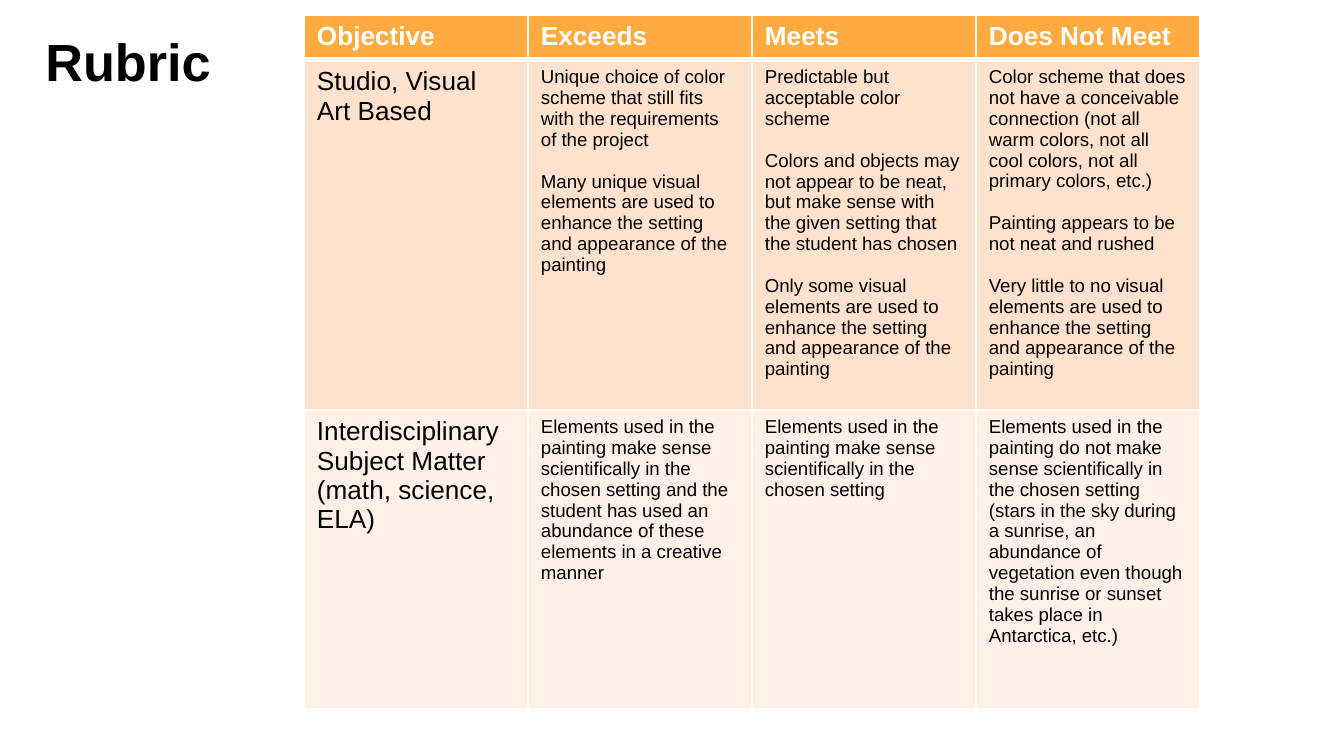
"""Build the grading rubric slide: a title beside a four-column table."""
from dataclasses import dataclass

from lxml.etree import SubElement
from pptx import Presentation
from pptx.dml.color import RGBColor as Color
from pptx.enum.text import MSO_ANCHOR as Anchor, PP_ALIGN as Align
from pptx.oxml.ns import qn
from pptx.util import Pt

EMU_PER_PX = 914400 / 134.4


@dataclass(frozen=True)
class Theme:
    font: str = "Arial"
    ink: str = "000000"
    white: str = "FFFFFF"
    header: str = "FFAB40"
    title_size: int = 28
    label_size: int = 14
    body_size: int = 10
    paragraph_gap: float = 11.2
    thin: int = 1
    thick: int = 3


@dataclass(frozen=True)
class Band:
    height: int
    fill: str
    top: int
    bottom: int
    cells: tuple[tuple[str, ...], ...]
    is_header: bool = False


THEME = Theme()
COLUMN_WIDTH = 224
BANDS = (
    Band(45, THEME.header, THEME.thin, THEME.thick,
         (("Objective",), ("Exceeds",), ("Meets",), ("Does Not Meet",)), True),
    Band(350, "FFE2CD", THEME.thick, THEME.thin, (
        ("Studio, Visual Art Based",),
        ("Unique choice of color scheme that still fits with the requirements of the project",
         "Many unique visual elements are used to enhance the setting and appearance of the painting"),
        ("Predictable but acceptable color scheme",
         "Colors and objects may not appear to be neat, but make sense with the given setting "
         "that the student has chosen",
         "Only some visual elements are used to enhance the setting and appearance of the painting"),
        ("Color scheme that does not have a conceivable connection (not all warm colors, "
         "not all cool colors, not all primary colors, etc.)",
         "Painting appears to be not neat and rushed",
         "Very little to no visual elements are used to enhance the setting and appearance "
         "of the painting"),
    )),
    Band(299, "FFF1E8", THEME.thin, THEME.thin, (
        ("Interdisciplinary Subject Matter (math, science, ELA)",),
        ("Elements used in the painting make sense scientifically in the chosen setting and the "
         "student has used an abundance of these elements in a creative manner",),
        ("Elements used in the painting make sense scientifically in the chosen setting",),
        ("Elements used in the painting do not make sense scientifically in the chosen setting "
         "(stars in the sky during a sunrise, an abundance of vegetation even though the sunrise "
         "or sunset takes place in Antarctica, etc.)",),
    )),
)


def px(length: int) -> int:
    """Turn pixels into EMU."""
    return round(length * EMU_PER_PX)


def apply(target, values: dict) -> None:
    """Set each named attribute on the target."""
    for name, value in values.items():
        setattr(target, name, value)


def write(frame, paragraphs: tuple[str, ...], size: int, color: str, bold: bool) -> None:
    """Fill a text frame with evenly spaced, left-aligned paragraphs."""
    for index, text in enumerate(paragraphs):
        para = frame.add_paragraph() if index else frame.paragraphs[0]
        gap = THEME.paragraph_gap if index else 0
        apply(para, {"alignment": Align.LEFT, "space_before": Pt(gap), "line_spacing": 1.0})
        span = para.add_run()
        span.text = text
        apply(span.font, {"name": THEME.font, "size": Pt(size), "bold": bold})
        span.font.color.rgb = Color.from_string(color)


def draw_borders(cell, top: int, bottom: int) -> None:
    """Outline a cell in white with the given top and bottom weights."""
    properties = cell._tc.get_or_add_tcPr()
    weights = {"a:lnL": THEME.thin, "a:lnR": THEME.thin, "a:lnT": top, "a:lnB": bottom}
    for tag, weight in weights.items():
        line = SubElement(properties, qn(tag), w=str(Pt(weight)))
        fill = SubElement(line, qn("a:solidFill"))
        SubElement(fill, qn("a:srgbClr"), val=THEME.white)


def draw_title(page, text: str) -> None:
    """Place and format the title placeholder."""
    box = page.shapes.title
    apply(box, {"left": px(32), "top": px(22), "width": px(376), "height": px(77)})
    apply(box.text_frame, {"word_wrap": True, "vertical_anchor": Anchor.TOP})
    write(box.text_frame, (text,), THEME.title_size, THEME.ink, True)


def draw_rubric(page, bands: tuple[Band, ...]) -> None:
    """Draw the rubric table, one band per row."""
    columns = len(bands[0].cells)
    height = sum(band.height for band in bands)
    table = page.shapes.add_table(len(bands), columns, px(304), px(15),
                                  px(COLUMN_WIDTH * columns), px(height)).table
    for column in table.columns:
        column.width = px(COLUMN_WIDTH)
    for row, band in zip(table.rows, bands):
        row.height = px(band.height)
        color = THEME.white if band.is_header else THEME.ink
        for index, (cell, paragraphs) in enumerate(zip(row.cells, band.cells)):
            is_label = band.is_header or index == 0
            size = THEME.label_size if is_label else THEME.body_size
            draw_borders(cell, band.top, band.bottom)
            cell.fill.solid()
            cell.fill.fore_color.rgb = Color.from_string(band.fill)
            apply(cell, {"margin_left": px(13), "margin_right": px(13), "margin_top": px(7),
                         "margin_bottom": px(7), "vertical_anchor": Anchor.TOP})
            write(cell.text_frame, paragraphs, size, color, band.is_header)


def main() -> None:
    """Build and save the deck."""
    deck = Presentation()
    apply(deck, {"slide_width": px(1344), "slide_height": px(756)})
    page = deck.slides.add_slide(deck.slide_layouts[5])
    draw_title(page, "Rubric")
    draw_rubric(page, BANDS)
    deck.save("out.pptx")


if __name__ == "__main__":
    main()
